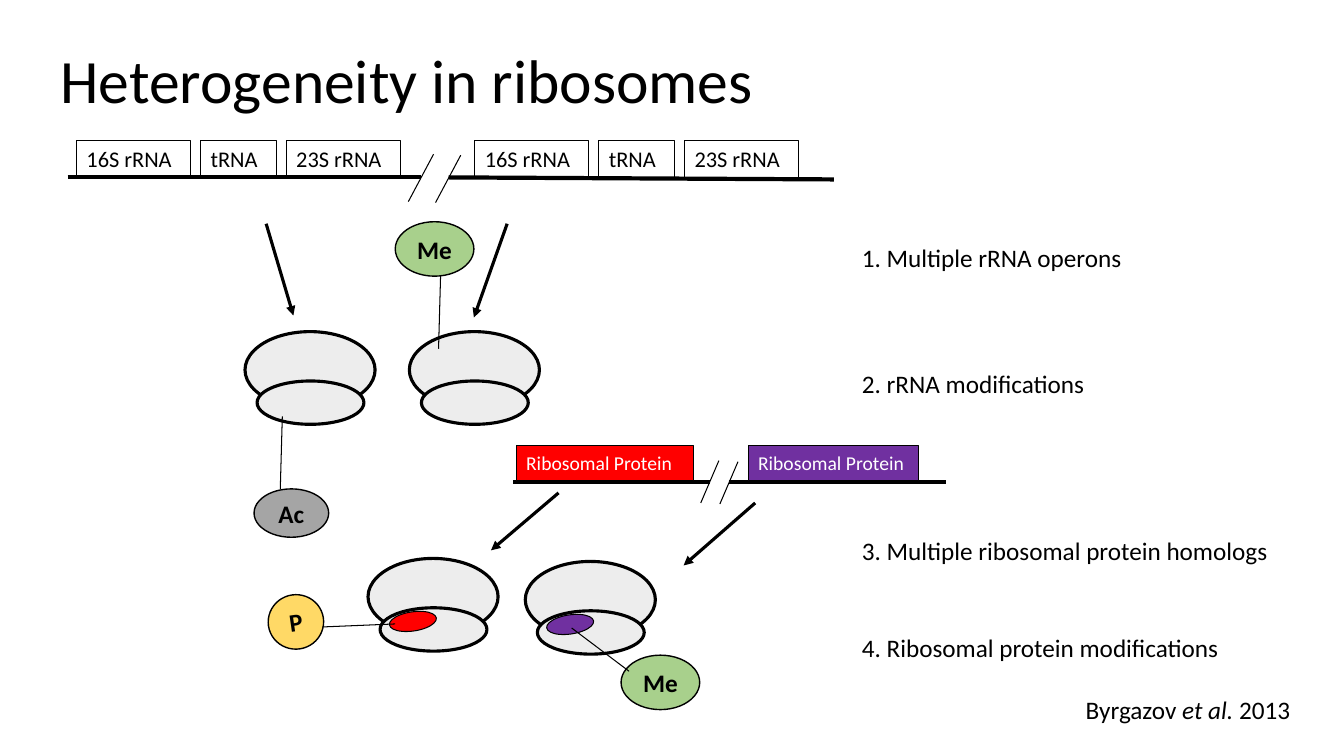
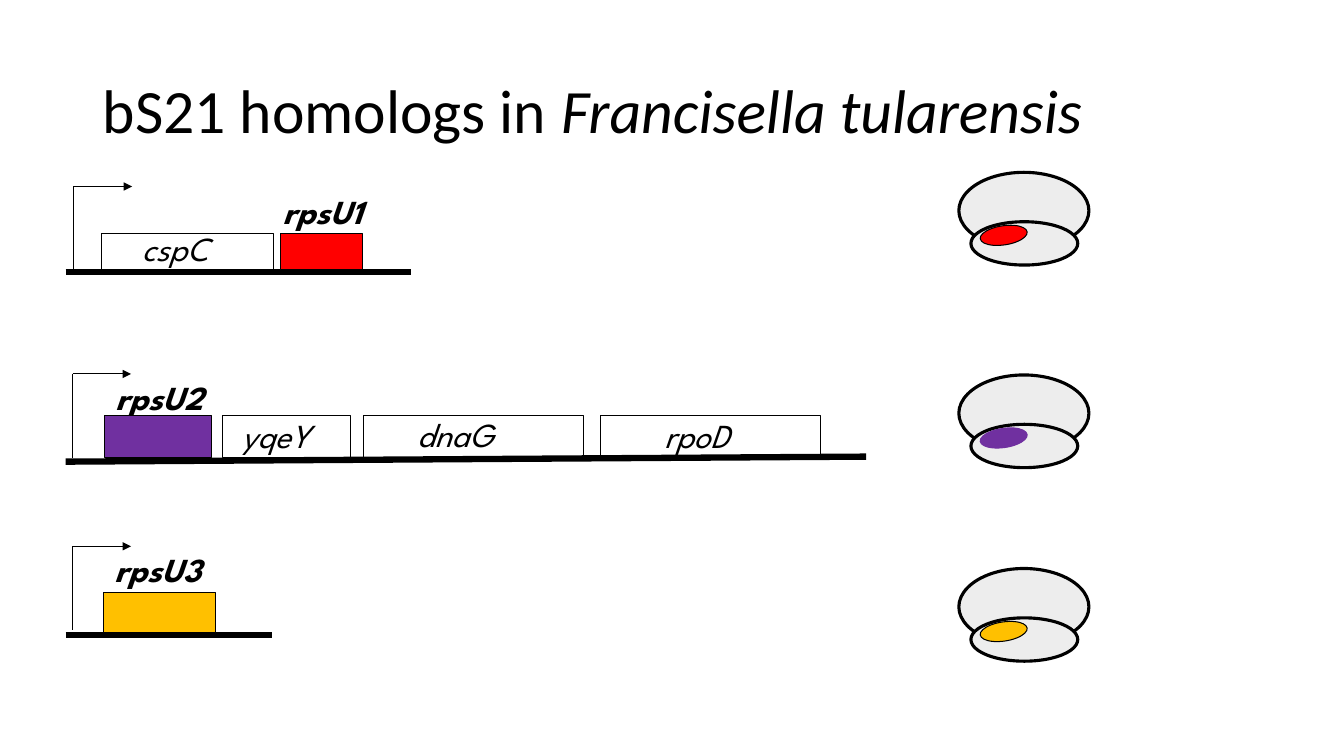
from lxml import etree
from pptx import Presentation
from pptx.dml.color import RGBColor
from pptx.enum import shapes, text
from pptx.oxml.ns import qn
from pptx.util import Inches, Pt

COLORS = {
    "black": "000000", "white": "FFFFFF", "subunit": "EDEDED",
    "red": "FF0000", "purple": "7030A0", "gold": "FFC000",
    "methyl": "A8D08C", "acetyl": "A5A5A5", "phospho": "FFD966",
}
RECT, OVAL = shapes.MSO_SHAPE.RECTANGLE, shapes.MSO_SHAPE.OVAL
TOP, MIDDLE = text.MSO_ANCHOR.TOP, text.MSO_ANCHOR.MIDDLE
LEFT, CENTER = text.PP_ALIGN.LEFT, text.PP_ALIGN.CENTER
LABEL = {"name": "Calibri", "size": Pt(18)}
TITLE = {**LABEL, "size": Pt(44)}
TAG = {**LABEL, "bold": True}
RRNA = {**LABEL, "size": Pt(16)}
PROTEIN = {**LABEL, "size": Pt(14)}
GENE = {"name": "League Spartan", "size": Pt(24), "italic": True}
RPSU = {**GENE, "bold": True}


def rgb(color):
    return RGBColor.from_string(COLORS[color])


class Deck:
    """Holds the shared style, the current slide and the current group."""

    def __init__(self):
        self.prs = Presentation()
        self.prs.slide_width, self.prs.slide_height = Inches(13.33), Inches(7.5)

    def new_slide(self, title, box):
        self.slide = self.prs.slides.add_slide(self.prs.slide_layouts[5])
        self.ungroup()
        holder = self.slide.shapes.title
        holder.left, holder.top, holder.width, holder.height = map(Inches, box)
        self.set_text(holder, title, TITLE, anchor=MIDDLE)
        holder.text_frame.paragraphs[0].line_spacing = 0.9

    def group(self):
        self.canvas = self.slide.shapes.add_group_shape().shapes

    def ungroup(self):
        self.canvas = self.slide.shapes

    def set_text(self, shape, runs, style, color="black", anchor=TOP,
                 align=LEFT, wrap=True):
        """Fill a shape with one paragraph of (words, extra format) runs."""
        frame = shape.text_frame
        frame.word_wrap, frame.vertical_anchor = wrap, anchor
        paragraph = frame.paragraphs[0]
        paragraph.alignment = align
        for words, extra in runs:
            run = paragraph.add_run()
            run.text = words
            for key, value in {**style, **extra}.items():
                setattr(run.font, key, value)
            run.font.color.rgb = rgb(color)

    def label(self, runs, left, top, width, style=LABEL, height=0.4):
        box = self.canvas.add_textbox(*map(Inches, (left, top, width, height)))
        self.set_text(box, runs, style)

    def shape(self, kind, box, fill=None, weight=0.75, outline="black", rotation=0):
        shape = self.canvas.add_shape(kind, *map(Inches, box))
        shape.shadow.inherit = False
        shape.rotation = rotation
        if fill:
            shape.fill.solid()
            shape.fill.fore_color.rgb = rgb(fill)
        else:
            shape.fill.background()
        shape.line.color.rgb = rgb(outline)
        shape.line.width = Pt(weight)
        return shape

    def line(self, start, end, weight=0.75, arrow=False):
        line = self.canvas.add_connector(
            shapes.MSO_CONNECTOR.STRAIGHT, *map(Inches, (*start, *end)))
        line.line.color.rgb = rgb("black")
        line.line.width = Pt(weight)
        properties = line._element.spPr
        if arrow:
            outline = properties.find(qn("a:ln"))
            etree.SubElement(outline, qn("a:tailEnd"), type="triangle")
        etree.SubElement(properties, qn("a:effectLst"))

    def ribosome(self, left, top, protein=None, outline="black"):
        """Large and small subunit, with an optional protein on the small one."""
        self.group()
        self.shape(OVAL, (left, top, 1.29, 0.76), "subunit", 2.25)
        self.shape(OVAL, (left + 0.12, top + 0.49, 1.06, 0.43), "subunit", 2.25)
        if protein:
            self.shape(OVAL, (left + 0.21, top + 0.53, 0.47, 0.19), protein,
                       outline=outline, rotation=-8.4)
        self.ungroup()

    def modification(self, name, box, fill, start, end, rotation=0):
        """Round tag and the line that ties it to its ribosome."""
        self.group()
        tag = self.shape(OVAL, box, fill, 1, rotation=rotation)
        self.set_text(tag, [(name, {})], TAG, anchor=MIDDLE, align=CENTER, wrap=False)
        self.line(start, end)
        self.ungroup()

    def broken_operon(self, segments, slashes, lean, genes, style, color="black"):
        """Axis in two segments, two slashes at the gap, and named genes."""
        self.group()
        for start, end in segments:
            self.line(start, end, 3)
        for x, y in slashes:
            self.line((x, y), (x - lean[0], y + lean[1]))
        for name, box, fill in genes:
            self.set_text(self.shape(RECT, box, fill), [(name, {})], style, color)
        self.ungroup()

    def promoter(self, left, top):
        self.group()
        self.line((left, top), (left, top + 0.83), 1)
        self.line((left, top), (left + 0.58, top), arrow=True)
        self.ungroup()

    def rpsu_operon(self, axis, top, height, genes, labels):
        """Gene boxes standing on a heavy axis, with their names."""
        self.group()
        for name, left, label_top, width, style in labels:
            self.label([(name, {})], left, label_top, width, style, 0.5)
        for left, width, fill in genes:
            self.shape(RECT, (left, top, width, height), fill)
        self.line(*axis, 4.5)
        self.ungroup()


def heterogeneity(deck):
    deck.new_slide([("Heterogeneity in ribosomes", {})], (0.5, 0.18, 11.78, 1.29))

    # rRNA operons: the same three genes on both sides of the gap
    rrna = [("16S rRNA", 0.76, 1.13), ("tRNA", 1.99, 0.75), ("23S rRNA", 2.84, 1.13)]
    deck.broken_operon(
        [((0.67, 1.76), (4.18, 1.76)), ((4.45, 1.76), (8.27, 1.78))],
        [(4.3, 1.53), (4.57, 1.54)], (0.25, 0.47),
        [(name, (left + shift, 1.39, width, 0.37), None)
         for shift in (0, 3.95) for name, left, width in rrna], RRNA)

    # Ribosomes
    deck.ribosome(2.43, 3.29)
    deck.ribosome(4.06, 3.29)
    deck.ribosome(3.65, 5.54, "red")
    deck.ribosome(5.21, 5.57, "purple")

    # Arrows from operons to ribosomes
    for start, end in [((2.64, 2.22), (2.91, 3.13)), ((5.03, 2.22), (4.7, 3.15)),
                       ((5.54, 4.89), (4.87, 5.46)), ((7.49, 4.99), (6.78, 5.61))]:
        deck.line(start, end, 2.25, arrow=True)

    # Modifications
    deck.modification("Me", (3.92, 2.2, 0.78, 0.54), "methyl", (4.37, 2.74), (4.35, 3.46))
    deck.modification("Ac", (2.52, 4.85, 0.74, 0.48), "acetyl", (2.8, 4.13), (2.78, 4.85))
    deck.modification("P", (2.66, 5.9, 0.55, 0.54), "phospho", (3.2, 6.22), (3.92, 6.19), -8.4)
    deck.modification("Me", (6.16, 6.5, 0.78, 0.54), "methyl", (6.24, 6.66), (5.67, 6.23))

    # Ribosomal protein operons
    deck.broken_operon(
        [((5.09, 4.78), (7.04, 4.78)), ((7.23, 4.78), (9.38, 4.78))],
        [(7.13, 4.57), (7.32, 4.58)], (0.18, 0.42),
        [("Ribosomal Protein", (5.12, 4.42, 1.76, 0.35), "red"),
         ("Ribosomal Protein", (7.42, 4.42, 1.69, 0.35), "purple")],
        PROTEIN, "white")

    # Sources of heterogeneity, each level with its drawing
    for source, top in [("1. Multiple rRNA operons", 2.36),
                        ("2. rRNA modifications", 3.6),
                        ("3. Multiple ribosomal protein homologs", 5.26),
                        ("4. Ribosomal protein modifications", 6.22)]:
        deck.label([(source, {})], 8.45, top, 4.43)
    deck.label([("Byrgazov ", {}), ("et al. ", {"italic": True}), ("2013", {})],
               10.67, 6.84, 2.6)


def homologs(deck):
    deck.new_slide([("bS21 homologs in ", {}),
                    ("Francisella tularensis", {"italic": True})],
                   (0.92, 0.4, 11.5, 1.45))

    # Operons
    deck.rpsu_operon(
        ((0.65, 2.7), (4.08, 2.7)), 2.32, 0.38,
        [(1.01, 1.7, None), (2.78, 0.82, "red")],
        [("rpsU1", 2.71, 1.84, 1.08, RPSU), ("cspC", 1.31, 2.21, 1.05, GENE)])
    deck.rpsu_operon(
        ((0.65, 4.58), (8.59, 4.53)), 4.12, 0.42,
        [(1.04, 1.06, "purple"), (2.21, 1.27, None),
         (3.61, 2.18, None), (5.96, 2.18, None)],
        [("rpsU2", 1.05, 3.69, 1.08, RPSU), ("yqeY", 2.3, 4.07, 1.03, GENE),
         ("dnaG", 4.04, 4.06, 1.16, GENE), ("rpoD", 6.49, 4.07, 1, GENE)])
    deck.rpsu_operon(
        ((0.65, 6.3), (2.7, 6.3)), 5.88, 0.42, [(1.03, 1.11, "gold")],
        [("rpsU3", 1.04, 5.4, 1.08, RPSU)])

    # Promoters and the ribosomes that carry each homolog
    for left, top in [(0.73, 1.85), (0.72, 3.71), (0.72, 5.42)]:
        deck.promoter(left, top)
    for top, protein, outline in [(1.71, "red", "black"), (3.72, "purple", "purple"),
                                  (5.64, "gold", "black")]:
        deck.ribosome(9.51, top, protein, outline)


def main():
    deck = Deck()
    heterogeneity(deck)
    homologs(deck)
    deck.prs.save("out.pptx")


if __name__ == "__main__":
    main()
